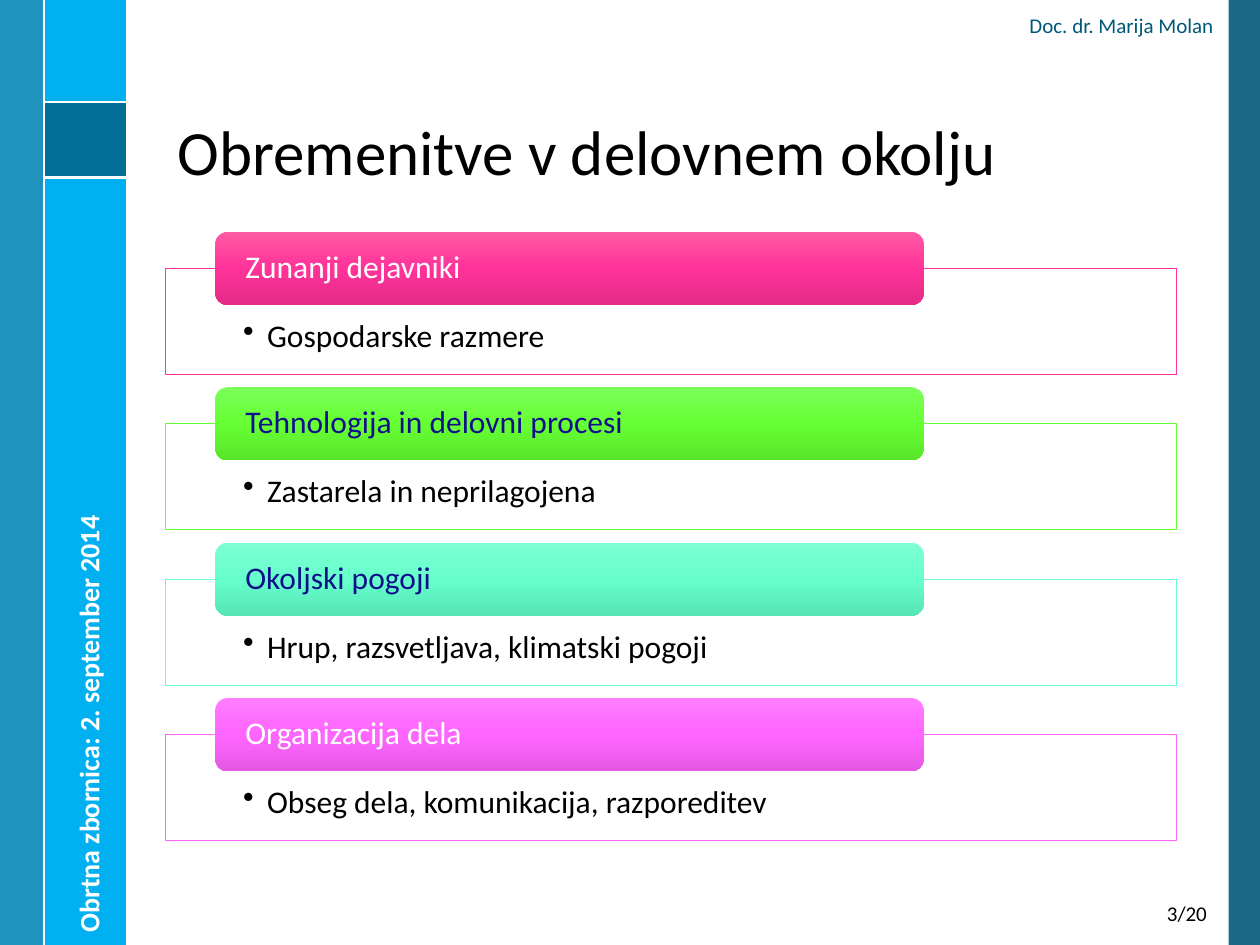
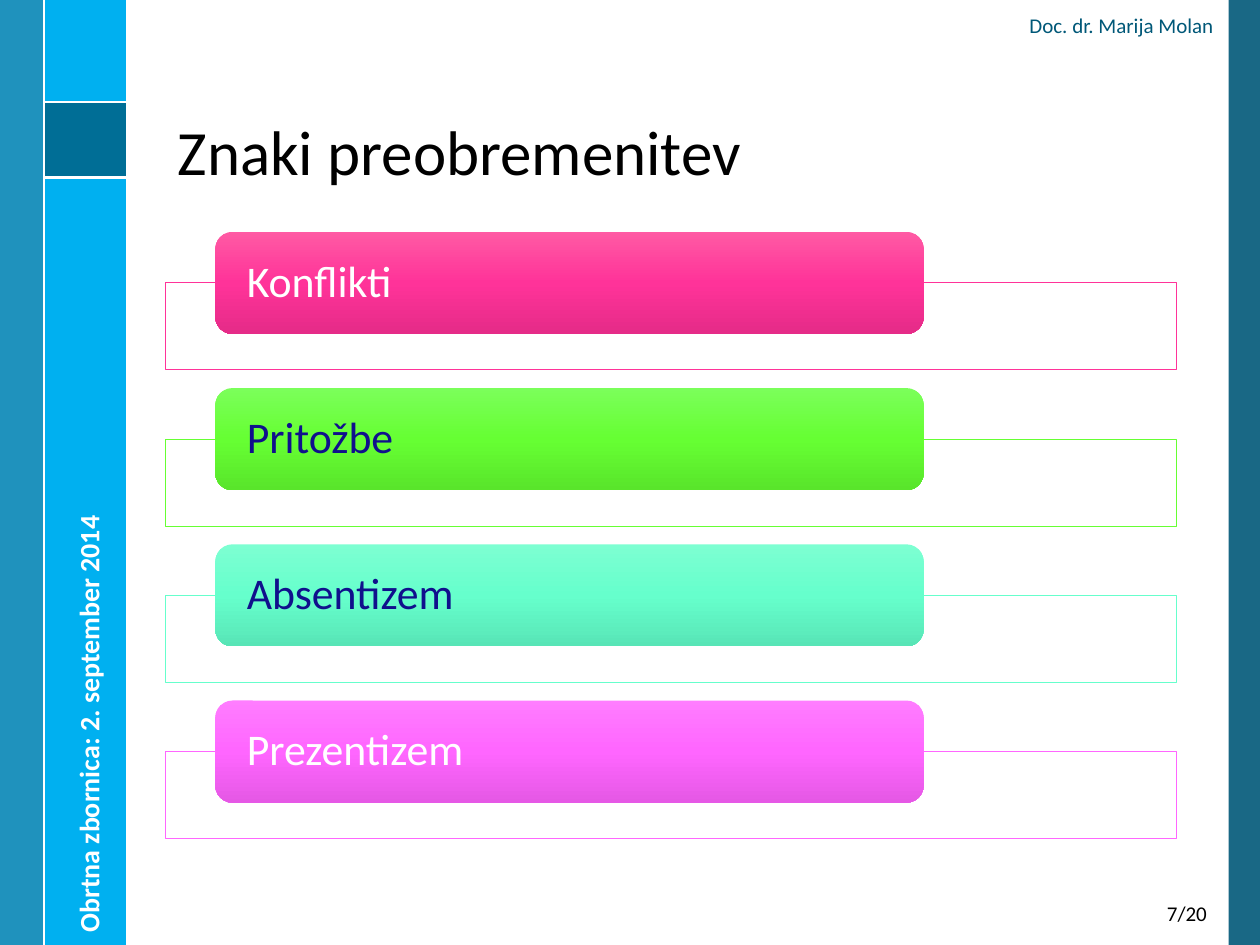
from lxml import etree
from copy import deepcopy
from pptx import Presentation
from pptx.dml.color import RGBColor
from pptx.enum.shapes import MSO_CONNECTOR as CONN, MSO_SHAPE as SHAPE
from pptx.enum.text import MSO_ANCHOR as ANCHOR, MSO_AUTO_SIZE as AUTO, PP_ALIGN as ALIGN
from pptx.oxml.ns import qn
from pptx.util import Inches, Pt

FONT = "Calibri"
WHITE = RGBColor(0xFF, 0xFF, 0xFF)
BLACK = RGBColor(0x00, 0x00, 0x00)
NAVY = RGBColor(0x10, 0x10, 0x8C)
TEAL = RGBColor(0x00, 0x58, 0x78)
BLUE = RGBColor(0x00, 0x84, 0xB4)
SKY = RGBColor(0x00, 0xB0, 0xF0)

# Bar colours: gradient top, middle (also the frame line), bottom, text
BAR_STYLES = [
    (RGBColor(0xFF, 0x5A, 0xA4), RGBColor(0xFF, 0x33, 0x99), RGBColor(0xE5, 0x2B, 0x88), WHITE),
    (RGBColor(0x7B, 0xFF, 0x5A), RGBColor(0x66, 0xFF, 0x33), RGBColor(0x59, 0xE5, 0x2B), NAVY),
    (RGBColor(0x7D, 0xFF, 0xD2), RGBColor(0x66, 0xFF, 0xCC), RGBColor(0x58, 0xE5, 0xB6), NAVY),
    (RGBColor(0xFF, 0x7D, 0xFF), RGBColor(0xFF, 0x66, 0xFF), RGBColor(0xE5, 0x58, 0xE5), WHITE),
]

# Side bands: left, top, width, height, colour, opacity in percent
BANDS = [
    (9.75, 0, 0.25, 7.5, TEAL, 90),
    (0.35, 0, 0.65, 7.5, SKY, 100),
    (0, 0, 0.35, 7.5, BLUE, 88),
    (0.35, 0.81, 0.65, 0.61, TEAL, 75),
]
BAND_LINES = [(0.35, 0.81, 1.01, 0.81), (0.35, 1.41, 1.01, 1.41), (0.35, 0, 0.35, 7.5)]

# Repeated texts: left, top, width, height, rotation, anchor, alignment, size, colour, bold
NOTE_STYLES = [
    (-1.49, 5.11, 4.38, 0.4, 270, ANCHOR.MIDDLE, ALIGN.LEFT, 16, WHITE, True),
    (3.98, 0, 5.75, 0.4, 0, ANCHOR.MIDDLE, ALIGN.RIGHT, 12, TEAL, False),
    (9.09, 7.1, 0.66, 0.4, 0, ANCHOR.TOP, ALIGN.CENTER, 12, BLACK, False),
]
EVENT = "Obrtna zbornica: 2. september 2014"
AUTHOR = "Doc. dr. Marija Molan"

# Title, page, bar height, last bar top, frame height, bar text size, (bar, detail) rows
SLIDES = [
    ("Obremenitve v delovnem okolju", "3/20", 0.58, 5.54, 0.84, 18, [
        ("Zunanji dejavniki", "Gospodarske razmere"),
        ("Tehnologija in delovni procesi", "Zastarela in neprilagojena"),
        ("Okoljski pogoji", "Hrup, razsvetljava, klimatski pogoji"),
        ("Organizacija dela", "Obseg dela, komunikacija, razporeditev")]),
    ("Znaki preobremenitev", "7/20", 0.81, 5.56, 0.69, 25, [
        ("Konflikti", ""), ("Pritožbe", ""), ("Absentizem", ""), ("Prezentizem", "")]),
]
FIRST_TOP = 1.84


def add_box(s, kind, left, top, width, height, color, opacity=100):
    sp = s.shapes.add_shape(kind, Inches(left), Inches(top), Inches(width), Inches(height))
    sp.shadow.inherit = False
    sp.fill.solid()
    sp.fill.fore_color.rgb = color
    sp.line.fill.background()
    if opacity < 100:
        clr = sp.fill._xPr.find(qn("a:solidFill"))[0]
        etree.SubElement(clr, qn("a:alpha")).set("val", str(opacity * 1000))
    return sp


def write(tf, text, size, color, anchor, align=ALIGN.LEFT, bold=False):
    tf.word_wrap = True
    tf.auto_size = AUTO.NONE
    tf.vertical_anchor = anchor
    p = tf.paragraphs[0]
    p.alignment = align
    r = p.add_run()
    r.text = text
    r.font.name, r.font.size, r.font.bold = FONT, Pt(size), bold
    r.font.color.rgb = color
    return p


prs = Presentation()
prs.slide_width, prs.slide_height = Inches(10), Inches(7.5)

for title, page, bar_h, last_top, frame_h, bar_size, rows in SLIDES:
    s = prs.slides.add_slide(prs.slide_layouts[5])

    # Side bands and their white dividers
    for *box, color, opacity in BANDS:
        add_box(s, SHAPE.RECTANGLE, *box, color, opacity)
    for ends in BAND_LINES:
        line = s.shapes.add_connector(CONN.STRAIGHT, *[Inches(v) for v in ends])
        line.line.color.rgb = WHITE
        line.line.width = Pt(1.5)
        etree.SubElement(line._element.spPr, qn("a:effectLst"))

    # Title
    sp = s.shapes.title
    sp.left, sp.top, sp.width, sp.height = Inches(1.31), Inches(0.19), Inches(8.03), Inches(1.36)
    p = write(sp.text_frame, title, 36, BLACK, ANCHOR.BOTTOM)
    p.line_spacing = 0.9

    # Framed rows, each with a bar straddling the frame's upper edge
    step = (last_top - FIRST_TOP) / (len(rows) - 1)
    for i, ((label, detail), (*stops, text_color)) in enumerate(zip(rows, BAR_STYLES)):
        top = FIRST_TOP + i * step
        frame = add_box(s, SHAPE.RECTANGLE, 1.31, top + bar_h / 2, 8.03, frame_h, WHITE, 90)
        frame.line.color.rgb = stops[1]
        frame.line.width = Pt(0.5)
        if detail:
            tf = frame.text_frame
            tf.margin_left = tf.margin_right = Inches(0.62)
            tf.margin_top, tf.margin_bottom = Inches(0.41), Inches(0.14)
            p = write(tf, detail, 18, BLACK, ANCHOR.TOP)
            pPr = p._p.get_or_add_pPr()
            pPr.set("marL", str(Inches(0.19)))
            pPr.set("indent", str(-Inches(0.19)))
            etree.SubElement(pPr, qn("a:buChar")).set("char", "•")
            p.line_spacing = 0.9

        bar = add_box(s, SHAPE.ROUNDED_RECTANGLE, 1.71, top, 5.62, bar_h, stops[1])
        bar.fill.gradient()
        bar.fill.gradient_angle = 270
        gs_list = bar.fill._xPr.find(qn("a:gradFill")).find(qn("a:gsLst"))
        gs_list.insert(1, deepcopy(gs_list[0]))
        for stop, color, position in zip(bar.fill.gradient_stops, stops, (0, 0.5, 1)):
            stop.color.rgb = color
            stop.position = position
        tf = bar.text_frame
        tf.margin_left = tf.margin_right = Inches(0.21)
        tf.margin_top = tf.margin_bottom = 0
        p = write(tf, label, bar_size, text_color, ANCHOR.MIDDLE)
        p.line_spacing = 0.9

    # Event, author and page number
    for text, style in zip((EVENT, AUTHOR, page), NOTE_STYLES):
        *box, rotation, anchor, align, size, color, bold = style
        sp = s.shapes.add_textbox(*[Inches(v) for v in box])
        sp.rotation = rotation
        write(sp.text_frame, text, size, color, anchor, align, bold)

prs.save("out.pptx")
